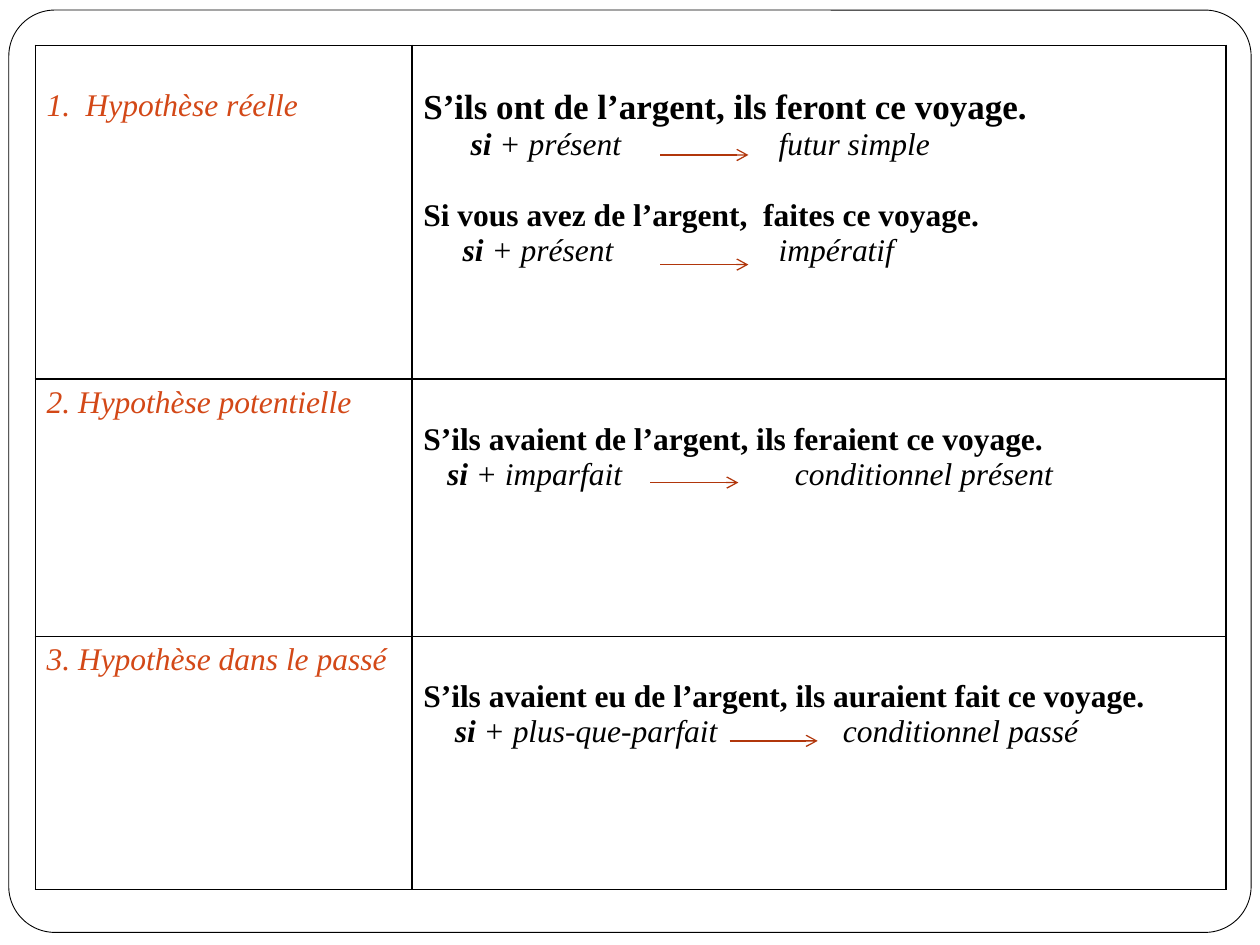
from dataclasses import dataclass

from lxml import etree
from pptx import Presentation
from pptx.dml.color import RGBColor
from pptx.enum.shapes import MSO_CONNECTOR, MSO_SHAPE
from pptx.oxml.ns import qn
from pptx.util import Inches, Pt

ROUND = MSO_SHAPE.ROUNDED_RECTANGLE
STRAIGHT = MSO_CONNECTOR.STRAIGHT
WHITE = RGBColor(0xFF, 0xFF, 0xFF)
BLACK = RGBColor(0x00, 0x00, 0x00)
ORANGE = RGBColor(0xD3, 0x48, 0x17)
RUST = RGBColor(0xB1, 0x36, 0x0B)
FONT = "Times New Roman"
WIDE, HIGH = Inches(10), Inches(7.5)
STEP = WIDE // 100
COLS = (29.9, 64.6)
SIDE, TIGHT, LOOSE = 0.9, 0.5, 3.4
GAP = 2.88
REACH = 7


@dataclass(frozen=True)
class Bit:
    text: str
    bold: bool = False
    slant: bool = False
    ink: RGBColor = BLACK
    size: int = 18


@dataclass(frozen=True)
class Line:
    bits: tuple[Bit, ...]
    tabs: tuple[float, ...] = ()
    gap: float = 0


@dataclass(frozen=True)
class Case:
    height: float
    drop: float
    title: Line
    lines: tuple[Line, ...]


@dataclass(frozen=True)
class Arrow:
    left: float
    top: float


def grid(count: float) -> int:
    return round(count * STEP)


def title(text: str, *tabs: float) -> Line:
    return Line((Bit(text, slant=True, ink=ORANGE),), tabs)


def model(text: str, size: int = 18, gap: float = 0) -> Line:
    return Line((Bit(text, bold=True, size=size),), gap=gap)


def rule(tense: str, result: str, *tabs: float) -> Line:
    return Line((Bit("\tsi ", True, True), Bit(f"+ {tense}\t{result}", slant=True)), tabs)


CASES = (
    Case(26.5, LOOSE, title("1.\tHypothèse réelle", 3.1), (
        model("S’ils ont de l’argent, ils feront ce voyage.", 20),
        rule("présent", "futur simple", 3.75, 28.2),
        model("Si vous avez de l’argent,  faites ce voyage.", gap=GAP),
        rule("présent", "impératif", 3.13, 28.2),
    )),
    Case(20.4, TIGHT, title("2. Hypothèse potentielle"), (
        model("S’ils avaient de l’argent, ils feraient ce voyage."),
        rule("imparfait", "conditionnel présent", 1.88, 29.5),
    )),
    Case(20.1, TIGHT, title("3. Hypothèse dans le passé"), (
        model("S’ils avaient eu de l’argent, ils auraient fait ce voyage."),
        rule("plus-que-parfait", "conditionnel passé", 2.5, 33.3),
    )),
)
ARROWS = (Arrow(52.4, 12.3), Arrow(52.4, 21), Arrow(51.6, 38.3), Arrow(57.9, 58.8))


def write(par, line: Line) -> None:
    if line.tabs:
        stops = etree.SubElement(par._p.get_or_add_pPr(), qn("a:tabLst"))
        for tab in line.tabs:
            etree.SubElement(stops, qn("a:tab"), pos=str(grid(tab)), algn="l")
    if line.gap:
        par.space_before = grid(line.gap)
    for bit in line.bits:
        run = par.add_run()
        run.text = bit.text
        font = run.font
        font.name, font.size = FONT, Pt(bit.size)
        font.bold, font.italic = bit.bold, bit.slant
        font.color.rgb = bit.ink


def edge(cell) -> None:
    props = cell._tc.get_or_add_tcPr()
    for side in ("lnL", "lnR", "lnT", "lnB"):
        border = etree.SubElement(props, qn(f"a:{side}"), w=str(Pt(1)))
        paint = etree.SubElement(border, qn("a:solidFill"))
        etree.SubElement(paint, qn("a:srgbClr"), val=str(BLACK))


def fill(cell, lines: tuple[Line, ...], drop: float) -> None:
    edge(cell)
    cell.fill.solid()
    cell.fill.fore_color.rgb = WHITE
    cell.margin_left = cell.margin_right = grid(SIDE)
    cell.margin_top, cell.margin_bottom = grid(drop), grid(TIGHT)
    frame = cell.text_frame
    for spot, line in enumerate(lines):
        write(frame.add_paragraph() if spot else frame.paragraphs[0], line)


def add_frame(shapes) -> None:
    frame = shapes.add_shape(ROUND, grid(0.7), grid(0.8), grid(98.6), grid(73.2))
    frame.adjustments[0] = 0.05
    frame.shadow.inherit = False
    frame.fill.solid()
    frame.fill.fore_color.rgb = WHITE
    frame.line.color.rgb = BLACK
    frame.line.width = Pt(0.5)


def add_cases(shapes) -> None:
    height = sum(case.height for case in CASES)
    table = shapes.add_table(len(CASES), len(COLS), grid(2.8), grid(3.6),
                             grid(sum(COLS)), grid(height)).table
    table.first_row = table.horz_banding = False
    for col, width in zip(table.columns, COLS):
        col.width = grid(width)
    for row, case in zip(table.rows, CASES):
        row.height = grid(case.height)
        fill(row.cells[0], (case.title,), case.drop)
        fill(row.cells[1], case.lines, LOOSE)


def add_arrow(shapes, arrow: Arrow) -> None:
    top = grid(arrow.top)
    link = shapes.add_connector(STRAIGHT, grid(arrow.left), top,
                                grid(arrow.left + REACH), top)
    link.line.color.rgb = RUST
    link.line.width = Pt(0.75)
    props = link._element.spPr
    etree.SubElement(props.find(qn("a:ln")), qn("a:tailEnd"), type="arrow")
    etree.SubElement(props, qn("a:effectLst"))


def main() -> None:
    deck = Presentation()
    deck.slide_width, deck.slide_height = WIDE, HIGH
    shapes = deck.slides.add_slide(deck.slide_layouts[6]).shapes
    add_frame(shapes)
    add_cases(shapes)
    for arrow in ARROWS:
        add_arrow(shapes, arrow)
    deck.save("out.pptx")


if __name__ == "__main__":
    main()
